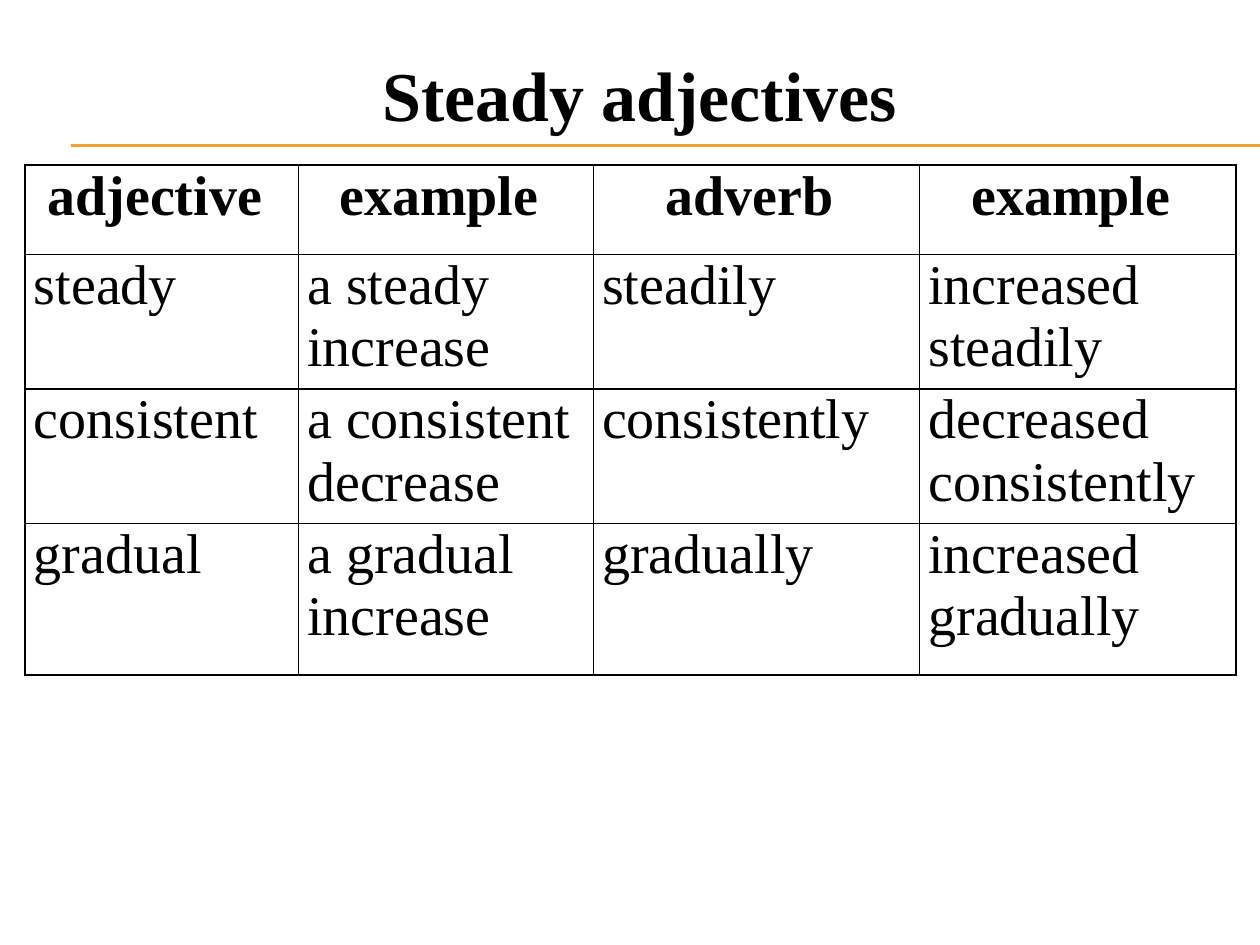
from dataclasses import dataclass

from lxml import etree
from pptx import Presentation
from pptx.dml.color import RGBColor
from pptx.enum import shapes, text
from pptx.oxml import ns
from pptx.util import Pt


@dataclass(frozen=True)
class Theme:
    ink: str = "000000"
    accent: str = "F0A22E"
    font: str = "Times New Roman"
    title_size: float = 40
    table_size: float = 32
    rule_width: float = 0.75
    border_width: float = 1


THEME = Theme()

COLUMN_WIDTHS = (156.24, 168.48, 186.48, 180.72)
ROW_HEIGHTS = (51.12, 74.88, 77.04, 86.4)
WORDS = (
    ("adjective ", "example ", "adverb ", "example "),
    ("steady", "a steady increase", "steadily", "increased steadily"),
    ("consistent", "a consistent decrease", "consistently", "decreased consistently"),
    ("gradual", "a gradual increase", "gradually", "increased gradually"),
)


def apply(target, formats):
    for key, value in formats.items():
        setattr(target, key, value)


def write(frame, words, size, heading):
    paragraph = frame.paragraphs[0]
    paragraph.alignment = text.PP_ALIGN.CENTER if heading else text.PP_ALIGN.LEFT
    run = paragraph.add_run()
    run.text = words
    apply(run.font, {"name": THEME.font, "size": Pt(size), "bold": heading})
    run.font.color.rgb = RGBColor.from_string(THEME.ink)


def add_rule(slide, y):
    rule = slide.shapes.add_connector(
        shapes.MSO_CONNECTOR.STRAIGHT, Pt(40.32), Pt(y), Pt(720), Pt(y))
    rule.line.color.rgb = RGBColor.from_string(THEME.accent)
    rule.line.width = Pt(THEME.rule_width)
    etree.SubElement(rule.element.spPr, ns.qn("a:effectLst"))


def add_title(slide, words):
    title = slide.shapes.add_textbox(Pt(82.08), Pt(25.92), Pt(566.64), Pt(55.44))
    apply(title.text_frame, {
        "word_wrap": True,
        "auto_size": text.MSO_AUTO_SIZE.SHAPE_TO_FIT_TEXT,
    })
    write(title.text_frame, words, THEME.title_size, True)


def add_borders(cell):
    properties = cell._tc.get_or_add_tcPr()
    for position, side in enumerate(("lnL", "lnR", "lnT", "lnB")):
        border = etree.Element(ns.qn(f"a:{side}"), w=str(Pt(THEME.border_width)))
        fill = etree.SubElement(border, ns.qn("a:solidFill"))
        etree.SubElement(fill, ns.qn("a:srgbClr"), val=THEME.ink)
        properties.insert(position, border)


def add_word_table(slide):
    table = slide.shapes.add_table(
        len(WORDS), len(COLUMN_WIDTHS), Pt(14.4), Pt(94.32),
        Pt(sum(COLUMN_WIDTHS)), Pt(sum(ROW_HEIGHTS))).table
    apply(table, {"first_row": False, "horz_banding": False})
    for column, width in zip(table.columns, COLUMN_WIDTHS):
        column.width = Pt(width)
    for row_index, (row, height) in enumerate(zip(table.rows, ROW_HEIGHTS)):
        row.height = Pt(height)
        for cell, words in zip(row.cells, WORDS[row_index]):
            apply(cell, {
                "margin_left": Pt(5), "margin_right": Pt(5),
                "margin_top": Pt(0), "margin_bottom": Pt(0),
            })
            cell.fill.background()
            add_borders(cell)
            write(cell.text_frame, words, THEME.table_size, row_index == 0)


def main():
    deck = Presentation()
    apply(deck, {"slide_width": Pt(720), "slide_height": Pt(540)})
    slide = deck.slides.add_slide(deck.slide_layouts[6])
    for y in (82.8, 83.52):
        add_rule(slide, y)
    add_title(slide, "Steady adjectives")
    add_word_table(slide)
    deck.save("out.pptx")


if __name__ == "__main__":
    main()
